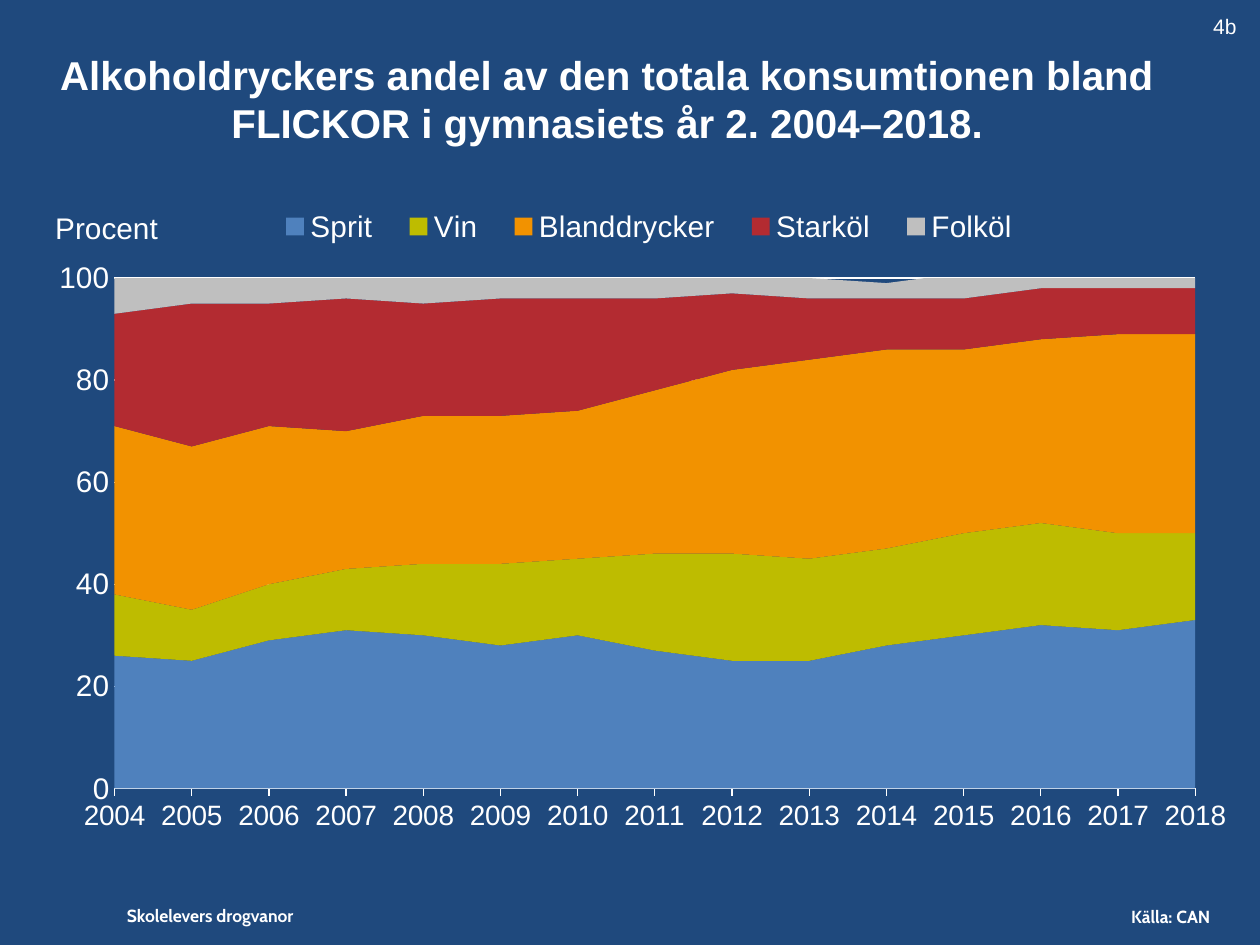
from pptx import Presentation
from pptx.chart.data import CategoryChartData
from pptx.dml.color import RGBColor
from pptx.enum.chart import XL_CHART_TYPE, XL_LEGEND_POSITION, XL_TICK_MARK
from pptx.enum.text import MSO_ANCHOR, PP_ALIGN
from pptx.oxml import parse_xml
from pptx.oxml.ns import nsdecls, qn
from pptx.util import Inches, Pt

COLORS = {
    "back": "1F497D", "text": "FFFFFF", "Sprit": "4F81BD", "Vin": "BEBC00",
    "Blanddrycker": "F29200", "Starköl": "B32B31", "Folköl": "BFBFBF",
}
YEARS = [str(year) for year in range(2004, 2019)]
SHARES = {
    "Sprit": [26, 25, 29, 31, 30, 28, 30, 27, 25, 25, 28, 30, 32, 31, 33],
    "Vin": [12, 10, 11, 12, 14, 16, 15, 19, 21, 20, 19, 20, 20, 19, 17],
    "Blanddrycker": [33, 32, 31, 27, 29, 29, 29, 32, 36, 39, 39, 36, 36, 39, 39],
    "Starköl": [22, 28, 24, 26, 22, 23, 22, 18, 15, 12, 10, 10, 10, 9, 9],
    "Folköl": [7, 6, 6, 5, 5, 4, 4, 5, 4, 4, 3, 5, 3, 3, 3],
}
TITLE = ("Alkoholdryckers andel av den totala konsumtionen bland "
         "FLICKOR i gymnasiets år 2. 2004–2018.")
MIDDLE = MSO_ANCHOR.MIDDLE
# text, (left, top, width, height), format
TEXTS = [
    ("Skolelevers drogvanor", (0.91, 7.13, 1.67, 0.27),
     dict(size=10, font="Cabin", bold=True, wrap=False)),
    ("Källa: CAN", (8.88, 7.14, 0.94, 0.27),
     dict(size=10, font="Cabin", bold=True, wrap=False)),
    (TITLE, (0.23, 0.31, 9.19, 0.94),
     dict(size=23, bold=True, align=PP_ALIGN.CENTER, anchor=MIDDLE)),
    ("Procent", (0.34, 1.61, 1.04, 0.39), dict(size=17, anchor=MIDDLE)),
    ("4b", (9.53, 0.06, 0.43, 0.3), dict(size=12)),
]
CHART = (0.47, 1.48, 9.26, 5.31)
# x, y, w, h as shares of the chart
PLOT = (0.046, 0.137, 0.928, 0.763)
LEGEND = (0.17, 0.02, 0.67, 0.08)


def rgb(name):
    return RGBColor.from_string(COLORS[name])


def style(font, size, name="Arial", bold=False):
    font.size, font.name, font.bold = Pt(size), name, bold
    font.color.rgb = rgb("text")


def add_text(slide, text, box, size, font="Arial", bold=False, wrap=True,
             align=PP_ALIGN.LEFT, anchor=MSO_ANCHOR.TOP):
    frame = slide.shapes.add_textbox(*map(Inches, box)).text_frame
    frame.word_wrap, frame.vertical_anchor = wrap, anchor
    para = frame.paragraphs[0]
    para.alignment = align
    run = para.add_run()
    run.text = text
    style(run.font, size, font, bold)


def layout(box, inner=False):
    """Manual chart layout element for a box given in shares."""
    target = '<c:layoutTarget val="inner"/>' if inner else ""
    modes = "".join(f'<c:{key}Mode val="edge"/>' for key in "xy")
    sizes = "".join(f'<c:{key} val="{val}"/>' for key, val in zip("xywh", box))
    return parse_xml(f'<c:layout {nsdecls("c")}><c:manualLayout>{target}'
                     f'{modes}{sizes}</c:manualLayout></c:layout>')


def place(parent, index, item):
    for old in parent.findall(qn("c:layout")):
        parent.remove(old)
    parent.insert(index, item)


def white_line(line):
    line.color.rgb = rgb("text")
    line.width = Pt(0.75)


def add_areas(slide):
    data = CategoryChartData(number_format="0")
    data.categories = YEARS
    for name, vals in SHARES.items():
        data.add_series(name, vals)
    chart = slide.shapes.add_chart(
        XL_CHART_TYPE.AREA_STACKED, *map(Inches, CHART), data).chart
    chart.has_title = False
    style(chart.font, 10, "Calibri")
    plot = chart.plots[0]
    plot.vary_by_categories = False
    for item in plot.series:
        item.format.fill.solid()
        item.format.fill.fore_color.rgb = rgb(item.name)
        item.format.line.fill.background()

    cats, vals = chart.category_axis, chart.value_axis
    style(cats.tick_labels.font, 16)
    cats.major_tick_mark = XL_TICK_MARK.OUTSIDE
    cats.minor_tick_mark = XL_TICK_MARK.NONE
    cats.has_major_gridlines = False
    white_line(cats.format.line)

    style(vals.tick_labels.font, 17)
    vals.tick_labels.number_format = "0"
    vals.tick_labels.number_format_is_linked = False
    vals.minimum_scale, vals.maximum_scale, vals.major_unit = 0, 100, 20
    vals.major_tick_mark = vals.minor_tick_mark = XL_TICK_MARK.NONE
    vals.has_major_gridlines = True
    white_line(vals.major_gridlines.format.line)
    vals.format.line.fill.background()

    chart.has_legend = True
    legend = chart.legend
    legend.position = XL_LEGEND_POSITION.BOTTOM
    legend.include_in_layout = False
    style(legend.font, 17)

    root = chart.element
    for cross in root.iter(qn("c:crossBetween")):
        cross.set("val", "midCat")
    place(root.find(".//" + qn("c:plotArea")), 0, layout(PLOT, inner=True))
    place(root.find(".//" + qn("c:legend")), 1, layout(LEGEND))


def main():
    deck = Presentation()
    deck.slide_width, deck.slide_height = Inches(10), Inches(7.5)
    slide = deck.slides.add_slide(deck.slide_layouts[6])
    slide.background.fill.solid()
    slide.background.fill.fore_color.rgb = rgb("back")
    add_areas(slide)
    for text, box, form in TEXTS:
        add_text(slide, text, box, **form)
    deck.save("out.pptx")


if __name__ == "__main__":
    main()
